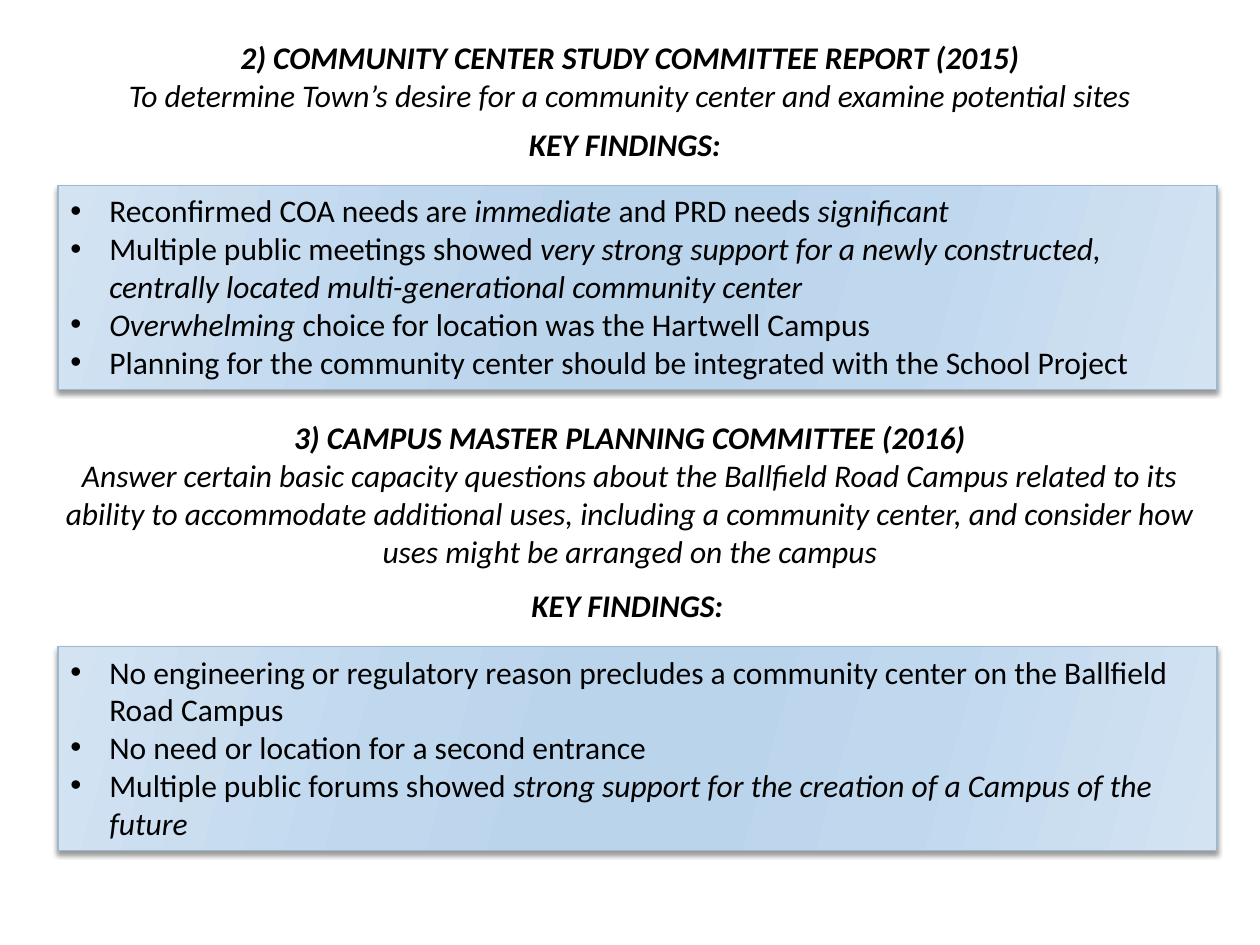
from lxml.etree import SubElement
from pptx import Presentation
from pptx.dml.color import RGBColor
from pptx.enum.shapes import MSO_SHAPE as Preset
from pptx.enum.text import MSO_ANCHOR as Anchor, MSO_AUTO_SIZE as AutoSize, PP_ALIGN as Align
from pptx.oxml.ns import qn
from pptx.util import Inches, Pt

GRADIENT = [(0, "D3E3F2"), (30, "C0D8EE"), (45, "BAD4EC"),
            (55, "BAD4EC"), (73, "C0D8EE"), (100, "D3E3F2")]
GRADIENT_ANGLE = 16
BODY = {"size": Pt(18), "name": "Calibri", "bold": False, "italic": False}
EMPHASIS = {**BODY, "italic": True}
HEADING = {**EMPHASIS, "bold": True}

COMMUNITY_HEADING = [
    "2) COMMUNITY CENTER STUDY COMMITTEE REPORT (2015)",
    "To determine Town’s desire for a community center and examine potential sites",
]
COMMUNITY_FINDINGS = [
    "Reconfirmed COA needs are *immediate *and PRD needs *significant*",
    "Multiple public meetings showed *very strong support for a newly constructed, "
    "centrally located multi-generational community center*",
    "*Overwhelming *choice for location was the Hartwell Campus",
    "Planning for the community center should be integrated with the School Project",
]
CAMPUS_HEADING = [
    "3) CAMPUS MASTER PLANNING COMMITTEE (2016)",
    "Answer certain basic capacity questions about the Ballfield Road Campus related to its",
    "ability to accommodate additional uses, including a community center, and consider how",
    "uses might be arranged on the campus",
]
CAMPUS_FINDINGS = [
    "No engineering or regulatory reason precludes a community center on the Ballfield Road Campus",
    "No need or location for a second entrance",
    "Multiple public forums showed *strong support for the creation of a Campus of the future*",
]


def color(value):
    return RGBColor.from_string(value)


def add_element(parent, tag, **attributes):
    return SubElement(parent, qn(tag), {key: str(value) for key, value in attributes.items()})


def place(shape, box):
    for side, length in zip(("left", "top", "width", "height"), box):
        setattr(shape, side, Inches(length))


def prepare_frame(shape, wrap=True):
    frame = shape.text_frame
    settings = {"word_wrap": wrap, "auto_size": AutoSize.NONE, "vertical_anchor": Anchor.TOP,
                "margin_left": Inches(0.1), "margin_right": Inches(0.1),
                "margin_top": Inches(0.05), "margin_bottom": Inches(0.05)}
    for name, value in settings.items():
        setattr(frame, name, value)
    return frame


def next_paragraph(frame, index):
    return frame.add_paragraph() if index else frame.paragraphs[0]


def add_run(paragraph, text, text_format):
    run = paragraph.add_run()
    run.text = text
    for name, value in text_format.items():
        setattr(run.font, name, value)
    run.font.color.rgb = color("000000")


def fill_heading(shape, box, lines):
    place(shape, box)
    frame = prepare_frame(shape)
    for index, line in enumerate(lines):
        paragraph = next_paragraph(frame, index)
        paragraph.alignment = Align.CENTER
        paragraph.space_before = Pt(0)
        add_run(paragraph, line, EMPHASIS if index else HEADING)


def add_label(slide, box, text):
    label = slide.shapes.add_textbox(*map(Inches, box))
    add_run(prepare_frame(label, wrap=False).paragraphs[0], text, HEADING)


def style_panel(panel):
    panel.fill.gradient()
    gradient = panel._element.spPr.find(qn("a:gradFill"))
    for child in list(gradient):
        gradient.remove(child)
    stops = add_element(gradient, "a:gsLst")
    for position, value in GRADIENT:
        stop = add_element(stops, "a:gs", pos=position * 1000)
        add_element(stop, "a:srgbClr", val=value)
    add_element(gradient, "a:lin", ang=GRADIENT_ANGLE * 60000, scaled=0)
    panel.line.color.rgb = color("9FB8CD")
    panel.line.width = Pt(0.75)
    panel.shadow.inherit = False
    effects = panel._element.spPr.find(qn("a:effectLst"))
    shadow = add_element(effects, "a:outerShdw", blurRad=Pt(3), dist=Pt(2),
                         dir=90 * 60000, rotWithShape=0)
    shade = add_element(shadow, "a:srgbClr", val="000000")
    add_element(shade, "a:alpha", val=40000)


def add_bullet(paragraph):
    properties = paragraph._p.get_or_add_pPr()
    properties.set("marL", str(Inches(0.31)))
    properties.set("indent", str(-Inches(0.31)))
    add_element(properties, "a:buFont", typeface="Arial")
    add_element(properties, "a:buChar", char="•")


def add_findings(slide, box, findings):
    panel = slide.shapes.add_shape(Preset.RECTANGLE, *map(Inches, box))
    style_panel(panel)
    frame = prepare_frame(panel)
    for index, finding in enumerate(findings):
        paragraph = next_paragraph(frame, index)
        paragraph.alignment = Align.LEFT
        add_bullet(paragraph)
        for part, text in enumerate(finding.split("*")):
            if text:
                add_run(paragraph, text, EMPHASIS if part % 2 else BODY)


def main():
    presentation = Presentation()
    presentation.slide_width = Inches(10)
    presentation.slide_height = Inches(7.5)
    slide = presentation.slides.add_slide(presentation.slide_layouts[5])

    fill_heading(slide.shapes.title, (0, 0.25, 10, 0.71), COMMUNITY_HEADING)
    add_label(slide, (4.1, 0.94, 1.8, 0.4), "KEY FINDINGS:")
    add_findings(slide, (0.46, 1.47, 9.2, 1.62), COMMUNITY_FINDINGS)

    campus_box = (0, 3.27, 10, 1.31)
    campus_heading = slide.shapes.add_textbox(*map(Inches, campus_box))
    fill_heading(campus_heading, campus_box, CAMPUS_HEADING)
    add_label(slide, (4.12, 4.6, 1.8, 0.4), "KEY FINDINGS:")
    add_findings(slide, (0.46, 5.13, 9.2, 1.62), CAMPUS_FINDINGS)

    presentation.save("out.pptx")


if __name__ == "__main__":
    main()
